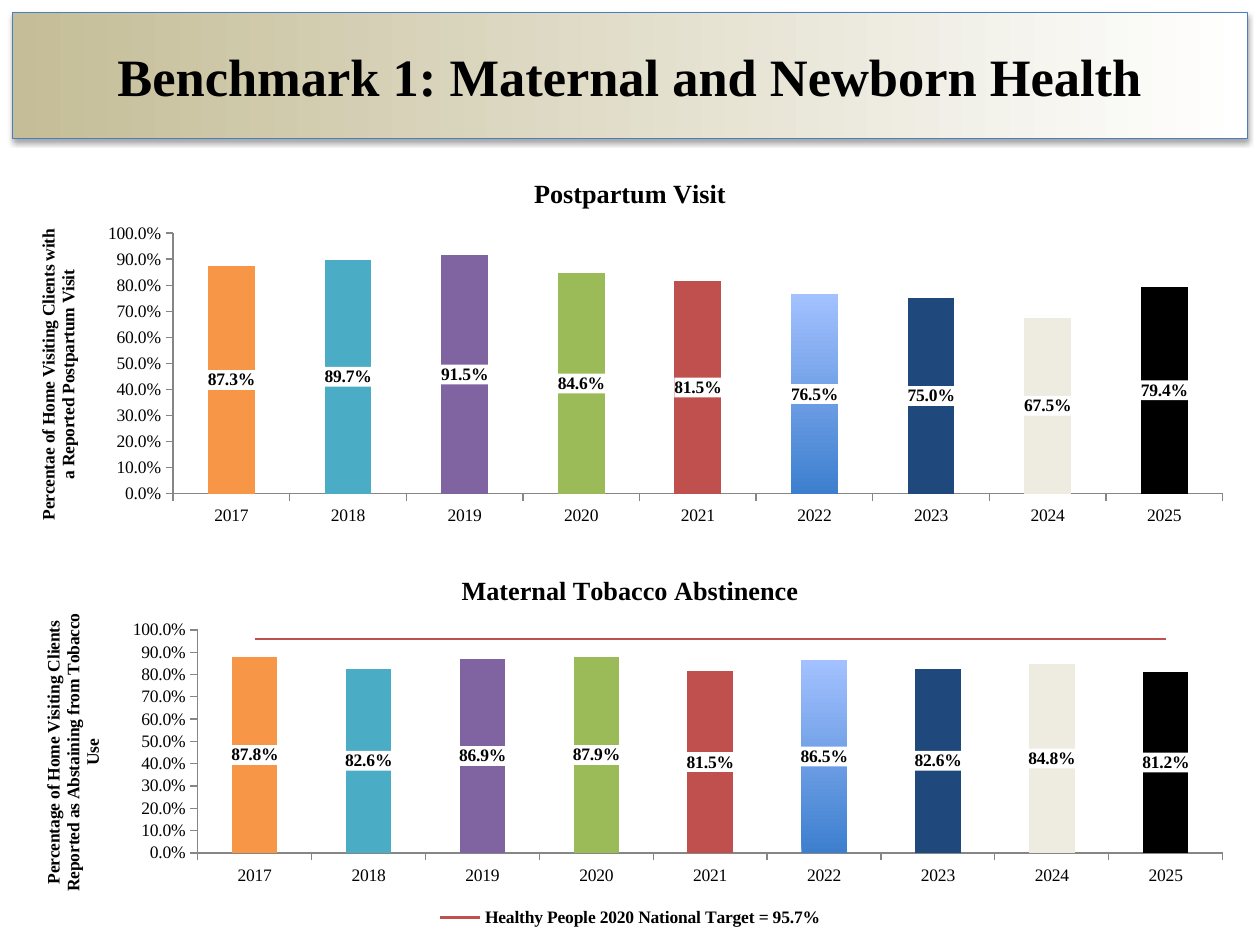
from dataclasses import dataclass

from lxml import etree
from pptx import Presentation, util as u
from pptx.chart.data import CategoryChartData
from pptx.dml.color import RGBColor
from pptx.enum import chart as ch, shapes, text
from pptx.oxml import parse_xml
from pptx.oxml.ns import nsdecls, qn

EMU_PER_PX = 9144  # 100 px to the inch


@dataclass(frozen=True)
class Theme:
    font: str = "Times New Roman"
    ink: str = "000000"
    paper: str = "FFFFFF"
    sand: str = "C4BD97"
    banner_edge: str = "4B7EBC"
    axis: str = "868686"
    target: str = "C0504D"
    # One colour a year; a pair runs from bottom to top
    years: tuple = ("F79646", "4BACC6", "8064A2", "9BBB59", "C0504D",
                    ("3D7FCE", "A3C1FF"), "1F497D", "EEECE1", "000000")
    heading_pt: int = 30
    chart_title_pt: int = 15
    body_pt: int = 10


THEME = Theme()
YEARS = [str(year) for year in range(2017, 2026)]
POSTPARTUM = (0.873, 0.897, 0.915, 0.846, 0.815, 0.765, 0.75, 0.675, 0.794)
TOBACCO = (0.878, 0.826, 0.869, 0.879, 0.815, 0.865, 0.826, 0.848, 0.812)
TARGET_NAME = "Healthy People 2020 National Target = 95.7%"
TARGET = 0.96


def px(*lengths):
    return [u.Emu(length * EMU_PER_PX) for length in lengths]


def rgb(code):
    return RGBColor.from_string(code)


def style_font(font, size=THEME.body_pt, bold=False):
    font.name, font.size, font.bold = THEME.font, u.Pt(size), bold
    font.color.rgb = rgb(THEME.ink)


def fill_gradient(fill, colors, angle):
    fill.gradient()
    fill.gradient_angle = angle
    for stop, color, position in zip(fill.gradient_stops, colors, (0, 1)):
        stop.color.rgb = rgb(color)
        stop.position = position


def add_banner(slide, heading, box):
    # Shaded band
    band = slide.shapes.add_shape(shapes.MSO_SHAPE.RECTANGLE, *px(*box))
    fill_gradient(band.fill, (THEME.sand, THEME.paper), 0)
    band.line.color.rgb = rgb(THEME.banner_edge)
    band.line.width = u.Pt(0.75)
    band.shadow.inherit = False
    effects = band._element.spPr.find(qn("a:effectLst"))
    effects.append(parse_xml(
        f'<a:outerShdw {nsdecls("a")} blurRad="39370" dist="22860" '
        'dir="5400000" rotWithShape="0"><a:srgbClr val="000000">'
        '<a:alpha val="35000"/></a:srgbClr></a:outerShdw>'))

    # Heading
    frame = slide.shapes.add_textbox(*px(*box)).text_frame
    frame.word_wrap = True
    frame.vertical_anchor = text.MSO_ANCHOR.MIDDLE
    paragraph = frame.paragraphs[0]
    paragraph.text = heading
    paragraph.alignment = text.PP_ALIGN.CENTER
    style_font(paragraph.font, THEME.heading_pt, True)


def set_title(owner, wording, size):
    frame = owner.text_frame
    frame.text = wording
    style_font(frame.paragraphs[0].font, size, True)


def set_plot_area(chart, x, y, w, h):
    area = chart._chartSpace.chart.plotArea
    for old in area.findall(qn("c:layout")):
        area.remove(old)
    sizes = "".join(f'<c:{tag} val="{value}"/>'
                    for tag, value in zip("xywh", (x, y, w, h)))
    area.insert(0, parse_xml(
        f'<c:layout {nsdecls("c")}><c:manualLayout>'
        '<c:layoutTarget val="inner"/><c:xMode val="edge"/>'
        f'<c:yMode val="edge"/>{sizes}</c:manualLayout></c:layout>'))


def style_axes(chart, value_title):
    for axis in (chart.category_axis, chart.value_axis):
        axis.has_major_gridlines = False
        axis.major_tick_mark = ch.XL_TICK_MARK.OUTSIDE
        axis.format.line.color.rgb = rgb(THEME.axis)
        style_font(axis.tick_labels.font)
    values = chart.value_axis
    values.minimum_scale, values.maximum_scale = 0, 1
    values.major_unit = 0.1
    values.tick_labels.number_format = "0.0%"
    values.tick_labels.number_format_is_linked = False
    set_title(values.axis_title, value_title, THEME.body_pt)


def style_columns(series):
    for index, color in enumerate(THEME.years):
        fill = series.points[index].format.fill
        if isinstance(color, tuple):
            fill_gradient(fill, color, 90)
        else:
            fill.solid()
            fill.fore_color.rgb = rgb(color)
    labels = series.data_labels
    labels.show_value = True
    labels.position = ch.XL_LABEL_POSITION.CENTER
    labels.number_format = "0.0%"
    labels.number_format_is_linked = False
    style_font(labels.font, bold=True)
    # White plate behind each label
    labels._element.find(qn("c:txPr")).addprevious(parse_xml(
        f'<c:spPr {nsdecls("c", "a")}><a:solidFill>'
        f'<a:srgbClr val="{THEME.paper}"/></a:solidFill></c:spPr>'))


def add_column_chart(slide, box, plot_area, title, value_title, rates):
    data = CategoryChartData(number_format="0.0%")
    data.categories = YEARS
    for name, values in rates.items():
        data.add_series(name, values)
    chart = slide.shapes.add_chart(
        ch.XL_CHART_TYPE.COLUMN_CLUSTERED, *px(*box), data).chart
    style_font(chart.font)
    chart.has_legend = False
    chart.has_title = True
    set_title(chart.chart_title, title, THEME.chart_title_pt)
    chart.chart_title.include_in_layout = False
    set_plot_area(chart, *plot_area)
    style_axes(chart, value_title)
    plot = chart.plots[0]
    plot.gap_width = 150
    plot.vary_by_categories = False
    style_columns(plot.series[0])
    return chart


def draw_last_series_as_line(chart):
    columns = chart.plots[0]._element
    series = columns.findall(qn("c:ser"))[-1]
    for tag in series.findall(qn("c:invertIfNegative")):
        series.remove(tag)
    line_plot = parse_xml(
        f'<c:lineChart {nsdecls("c")}><c:grouping val="standard"/>'
        '<c:varyColors val="0"/><c:marker val="1"/></c:lineChart>')
    line_plot.insert(2, series)
    for axis in columns.findall(qn("c:axId")):
        etree.SubElement(line_plot, qn("c:axId"), val=axis.get("val"))
    columns.addnext(line_plot)

    target = chart.plots[1].series[0]
    target.format.line.color.rgb = rgb(THEME.target)
    target.format.line.width = u.Pt(1.25)
    target.marker.style = ch.XL_MARKER_STYLE.NONE
    target.smooth = False


def add_target_legend(chart):
    chart.has_legend = True
    legend = chart.legend
    legend.position = ch.XL_LEGEND_POSITION.BOTTOM
    legend.include_in_layout = False
    style_font(legend.font, bold=True)
    # The columns need no entry
    legend._element.find(qn("c:legendPos")).addnext(parse_xml(
        f'<c:legendEntry {nsdecls("c")}><c:idx val="0"/>'
        '<c:delete val="1"/></c:legendEntry>'))


def main():
    deck = Presentation()
    deck.slide_width, deck.slide_height = px(1000, 750)
    slide = deck.slides.add_slide(deck.slide_layouts[6])

    add_banner(slide, "Benchmark 1: Maternal and Newborn Health",
               (10, 10, 980, 100))
    add_column_chart(
        slide, (10, 125, 980, 300), (0.13, 0.2, 0.85, 0.69),
        "Postpartum Visit",
        "Percentae of Home Visiting Clients with a Reported Postpartum Visit",
        {"Series 1": POSTPARTUM})
    tobacco = add_column_chart(
        slide, (10, 440, 980, 300), (0.15, 0.2, 0.83, 0.59),
        "Maternal Tobacco Abstinence",
        "Percentage of Home Visiting Clients Reported as Abstaining "
        "from Tobacco Use",
        {"Series 1": TOBACCO, TARGET_NAME: [TARGET] * len(YEARS)})
    draw_last_series_as_line(tobacco)
    add_target_legend(tobacco)

    deck.save("out.pptx")


if __name__ == "__main__":
    main()
